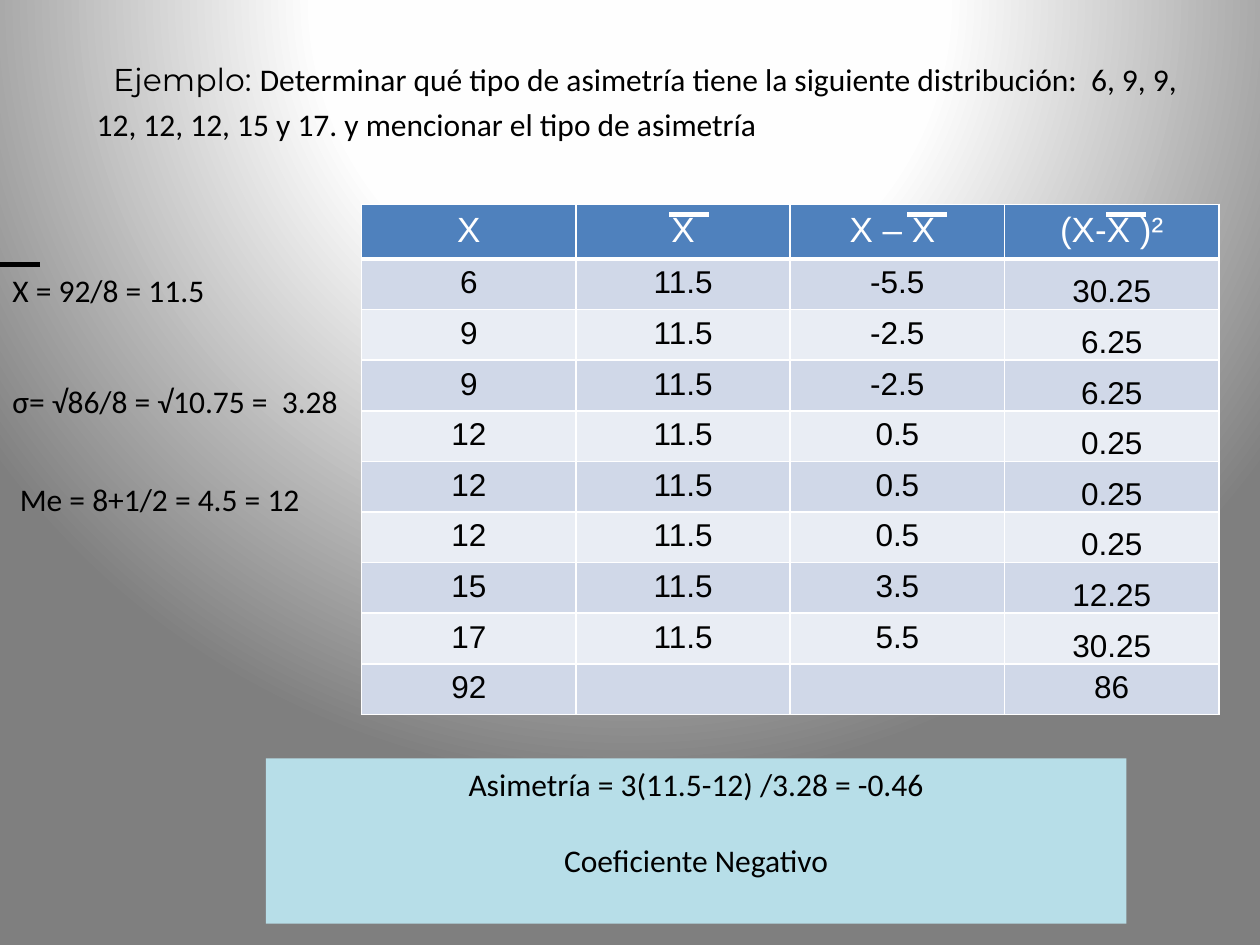
from lxml import etree
from pptx import Presentation
from pptx import oxml
from pptx import util as u
from pptx.dml import color
from pptx.enum import shapes, text
from pptx.oxml import ns

COLORS = {"black": "000000", "white": "FFFFFF", "header": "4F81BD",
          "odd": "D0D8E8", "even": "E9EDF4", "result": "B7DEE8"}


def format_runs(paragraph, font, size, ink="black"):
    for run in paragraph.runs:
        run.font.name = font
        run.font.size = u.Pt(size)
        run.font.color.rgb = color.RGBColor.from_string(COLORS[ink])


def add_cell_border(cell, side, width):
    line = etree.SubElement(cell._tc.get_or_add_tcPr(), ns.qn("a:" + side), w=str(u.Pt(width)))
    fill = etree.SubElement(line, ns.qn("a:solidFill"))
    etree.SubElement(fill, ns.qn("a:srgbClr"), val=COLORS["white"])


presentation = Presentation()
presentation.slide_width = u.Cm(25.4)
presentation.slide_height = u.Cm(19.05)
slide = presentation.slides.add_slide(presentation.slide_layouts[6])

# Background: circular gradient centred above the slide
stops = "".join(f'<a:gs pos="{place * 1000}"><a:srgbClr val="{shade}"/></a:gs>'
                for place, shade in [(0, "FFFFFF"), (40, "FEFEFE"), (100, "7F7F7F")])
background = oxml.parse_xml(
    f'<p:bg {ns.nsdecls("p", "a")}><p:bgPr><a:gradFill rotWithShape="1">'
    f'<a:gsLst>{stops}</a:gsLst><a:path path="circle">'
    '<a:fillToRect l="50000" t="-80000" r="50000" b="180000"/></a:path>'
    '</a:gradFill><a:effectLst/></p:bgPr></p:bg>')
slide.element.cSld.insert(0, background)

# Statement of the example
statement = slide.shapes.add_textbox(u.Cm(1.7), u.Cm(0.46), u.Cm(23.19), u.Cm(2.57))
statement.text_frame.word_wrap = True
paragraph = statement.text_frame.paragraphs[0]
for words in (" ", "Ejemplo: ",
              "Determinar qué tipo de asimetría tiene la siguiente distribución:  "
              "6, 9, 9, 12, 12, 12, 15 y 17. y mencionar el tipo de asimetría"):
    paragraph.add_run().text = words
format_runs(paragraph, "Montserrat", 18)
paragraph.runs[0].font.size = u.Pt(36)
paragraph.runs[2].font.name = "Calibri"

# Table of deviations
rows = [("X", "X", "X – X ", "(X-X )²"),
        ("6", "11.5", "-5.5", "30.25"),
        ("9", "11.5", "-2.5", "6.25"),
        ("9", "11.5", "-2.5", "6.25"),
        ("12", "11.5", "0.5", "0.25"),
        ("12", "11.5", "0.5", "0.25"),
        ("12", "11.5", "0.5", "0.25"),
        ("15", "11.5", "3.5", "12.25"),
        ("17", "11.5", "5.5", "30.25"),
        ("92", "", "", "86")]
table = slide.shapes.add_table(len(rows), 4, u.Cm(7.29), u.Cm(4.12),
                               u.Cm(17.27), u.Cm(10.24)).table
for column in table.columns:
    column.width = u.Cm(4.32)
for r, values in enumerate(rows):
    table.rows[r].height = u.Cm(1.02 if r else 1.1)
    for c, value in enumerate(values):
        cell = table.cell(r, c)
        paragraph = cell.text_frame.paragraphs[0]
        paragraph.text = value
        paragraph.alignment = text.PP_ALIGN.CENTER
        paragraph.font.size = u.Pt(18)
        format_runs(paragraph, "Arial", 18 if r else 20, "black" if r else "white")
        if c == 3 and 0 < r < len(rows) - 1:
            cell.vertical_anchor = text.MSO_ANCHOR.BOTTOM
            cell.margin_left = cell.margin_right = 0
            cell.margin_top = cell.margin_bottom = 0
        for side in ("lnL", "lnR", "lnT", "lnB"):
            add_cell_border(cell, side, 3 if r == 0 and side == "lnB" else 1)
        cell.fill.solid()
        band = "header" if r == 0 else "odd" if r % 2 else "even"
        cell.fill.fore_color.rgb = color.RGBColor.from_string(COLORS[band])

# Mean, deviation and median
for words, left, top, width in [("X = 92/8 = 11.5", 0, 5.33, 5.94),
                                ("σ= √86/8 = √10.75 =  3.28", 0, 7.57, 9.58),
                                ("Me = 8+1/2 = 4.5 = 12", 0.15, 9.55, 8.31)]:
    formula = slide.shapes.add_textbox(u.Cm(left), u.Cm(top), u.Cm(width), u.Cm(1.27))
    formula.text_frame.word_wrap = True
    formula.text_frame.text = words
    format_runs(formula.text_frame.paragraphs[0], "Calibri", 18)

# Result
result = slide.shapes.add_shape(shapes.MSO_SHAPE.RECTANGLE, u.Cm(5.36), u.Cm(15.29),
                                u.Cm(17.35), u.Cm(3.33))
result.shadow.inherit = False
result.fill.solid()
result.fill.fore_color.rgb = color.RGBColor.from_string(COLORS["result"])
result.line.fill.background()
result.text_frame.word_wrap = True
result.text_frame.vertical_anchor = text.MSO_ANCHOR.TOP
result.text_frame.text = "Asimetría = 3(11.5-12) /3.28 = -0.46\nCoeficiente Negativo"
for paragraph in result.text_frame.paragraphs:
    paragraph.alignment = text.PP_ALIGN.CENTER
    format_runs(paragraph, "Calibri", 18)
result.text_frame.paragraphs[1].space_before = u.Pt(22)

# Bars over each mean symbol
for left, top, ink in [(13.49, 4.32, "white"), (0, 5.33, "black"),
                       (22.3, 4.32, "white"), (18.29, 4.32, "white")]:
    bar = slide.shapes.add_connector(shapes.MSO_CONNECTOR.STRAIGHT, u.Cm(left), u.Cm(top),
                                     u.Cm(left + 0.8), u.Cm(top))
    bar.line.width = u.Pt(3)
    bar.line.color.rgb = color.RGBColor.from_string(COLORS[ink])
    etree.SubElement(bar._element.spPr, ns.qn("a:effectLst"))

presentation.save("out.pptx")
